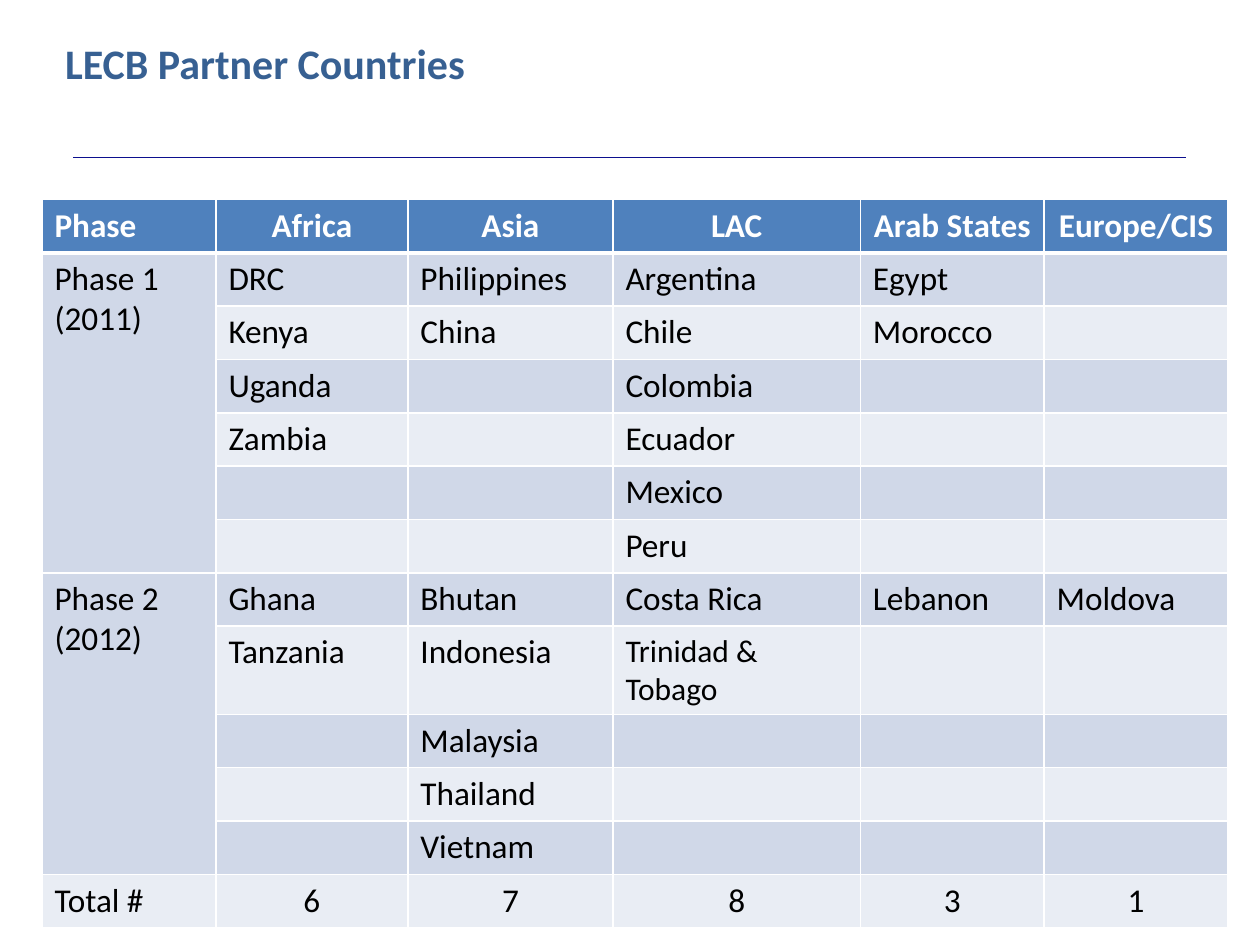
from lxml.etree import SubElement
from pptx import Presentation
from pptx.dml.color import RGBColor
from pptx.enum.shapes import MSO_CONNECTOR as Conn
from pptx.enum.text import MSO_ANCHOR as Anchor, MSO_AUTO_SIZE as Fit, PP_ALIGN as Align
from pptx.oxml.ns import qn
from pptx.util import Pt


def color(code):
    return RGBColor.from_string(code)


def edge(cell, side, width):
    """Add a white border; side is L, R, T or B, in that order."""
    line = SubElement(cell._tc.get_or_add_tcPr(), qn("a:ln" + side), w=str(Pt(width)))
    fill = SubElement(line, qn("a:solidFill"))
    SubElement(fill, qn("a:srgbClr"), val="FFFFFF")


prs = Presentation()
prs.slide_width, prs.slide_height = Pt(720), Pt(540)
slide = prs.slides.add_slide(prs.slide_layouts[5])

# Title
title = slide.shapes.title
title.left, title.top, title.width, title.height = Pt(30), Pt(18), Pt(510), Pt(36)
frame = title.text_frame
frame.text = "LECB Partner Countries"
frame.vertical_anchor = Anchor.MIDDLE
frame.auto_size = Fit.SHAPE_TO_FIT_TEXT
para = frame.paragraphs[0]
para.alignment = Align.LEFT
para.font.name, para.font.size, para.font.bold = "Calibri", Pt(24), True
para.font.color.rgb = color("376092")

# Rule under the title
rule = slide.shapes.add_connector(Conn.STRAIGHT, Pt(42), Pt(90), Pt(678), Pt(90))
rule.line.color.rgb = color("0C0F8E")
rule.line.width = Pt(1)
SubElement(rule._element.spPr, qn("a:effectLst"))

# Table of countries by phase and region
rows = [
    ["Phase", "Africa", "Asia", "LAC", "Arab States", "Europe/CIS"],
    ["Phase 1 (2011)", "DRC", "Philippines", "Argentina", "Egypt", ""],
    ["", "Kenya", "China", "Chile", "Morocco", ""],
    ["", "Uganda", "", "Colombia", "", ""],
    ["", "Zambia", "", "Ecuador", "", ""],
    ["", "", "", "Mexico", "", ""],
    ["", "", "", "Peru", "", ""],
    ["Phase 2\n(2012)", "Ghana", "Bhutan", "Costa Rica", "Lebanon", "Moldova"],
    ["", "Tanzania", "Indonesia", "Trinidad & Tobago", "", ""],
    ["", "", "Malaysia", "", "", ""],
    ["", "", "Thailand", "", "", ""],
    ["", "", "Vietnam", "", "", ""],
    ["Total #", "6", "7", "8", "3", "1"],
]
widths = [99.4, 109.7, 117.2, 141.4, 105, 105]
last = len(rows) - 1
table = slide.shapes.add_table(len(rows), len(widths), Pt(24), Pt(114),
                               Pt(sum(widths)), Pt(415)).table
for col, width in zip(table.columns, widths):
    col.width = Pt(width)

for r, row in enumerate(rows):
    table.rows[r].height = Pt(49 if "Trinidad & Tobago" in row else 30.5)
    head = r == 0
    for c, text in enumerate(row):
        cell = table.cell(r, c)
        for side in "LRTB":
            thick = (head and side == "B") or (r == 1 and side == "T")
            edge(cell, side, 3 if thick else 1)
        shade = "4F81BD" if head else "D0D8E8" if r % 2 else "E9EDF4"
        cell.fill.solid()
        cell.fill.fore_color.rgb = color(shade)
        if head and c:
            cell.vertical_anchor = Anchor.MIDDLE
            cell.margin_left = cell.margin_right = Pt(5)
            cell.margin_top = cell.margin_bottom = 0
        cell.text = text
        for para in cell.text_frame.paragraphs:
            if c and r in (0, last):
                para.alignment = Align.CENTER
            if c and head:
                para.space_after = Pt(3)
            font = para.font
            font.name, font.bold = "Calibri", head
            font.size = Pt(18 if text.startswith("Trinidad") else 19)
            font.color.rgb = color("FFFFFF" if head else "000000")

for first, end in (1, 6), (7, 11):
    table.cell(first, 0).merge(table.cell(end, 0))

prs.save("out.pptx")
